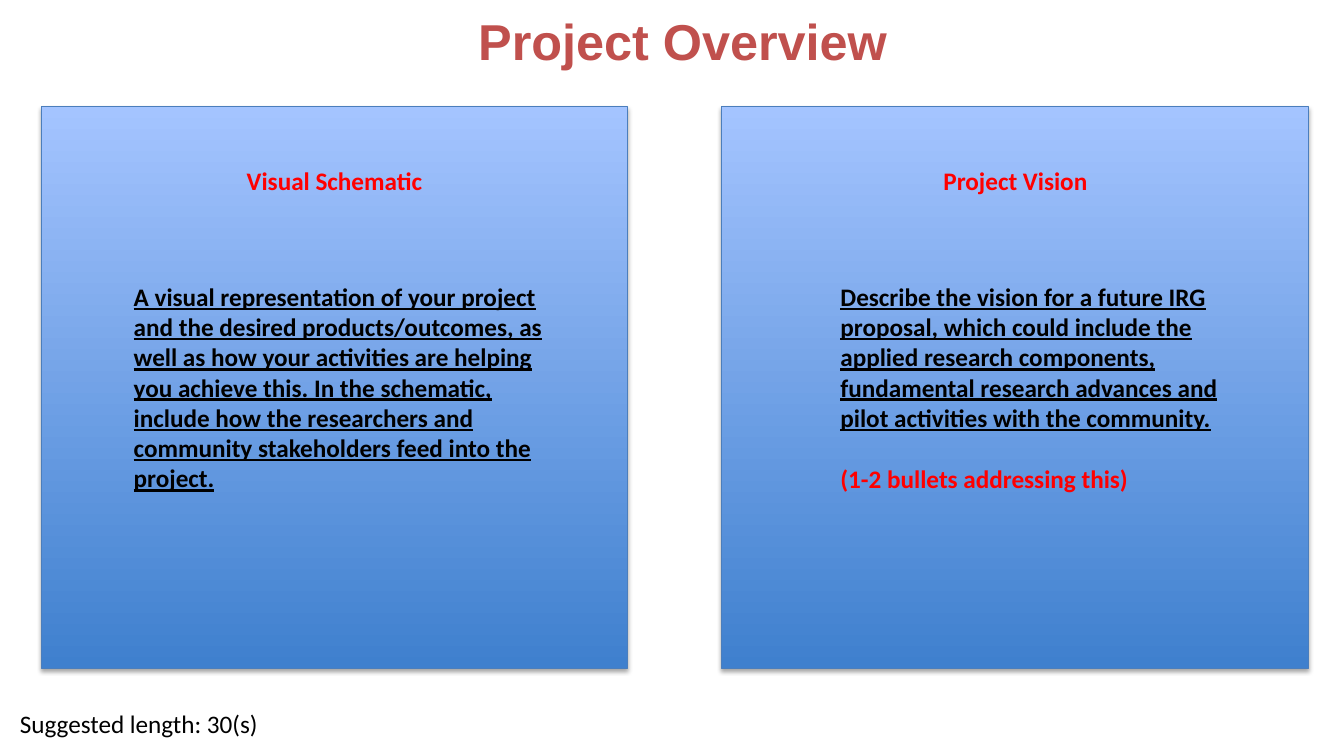
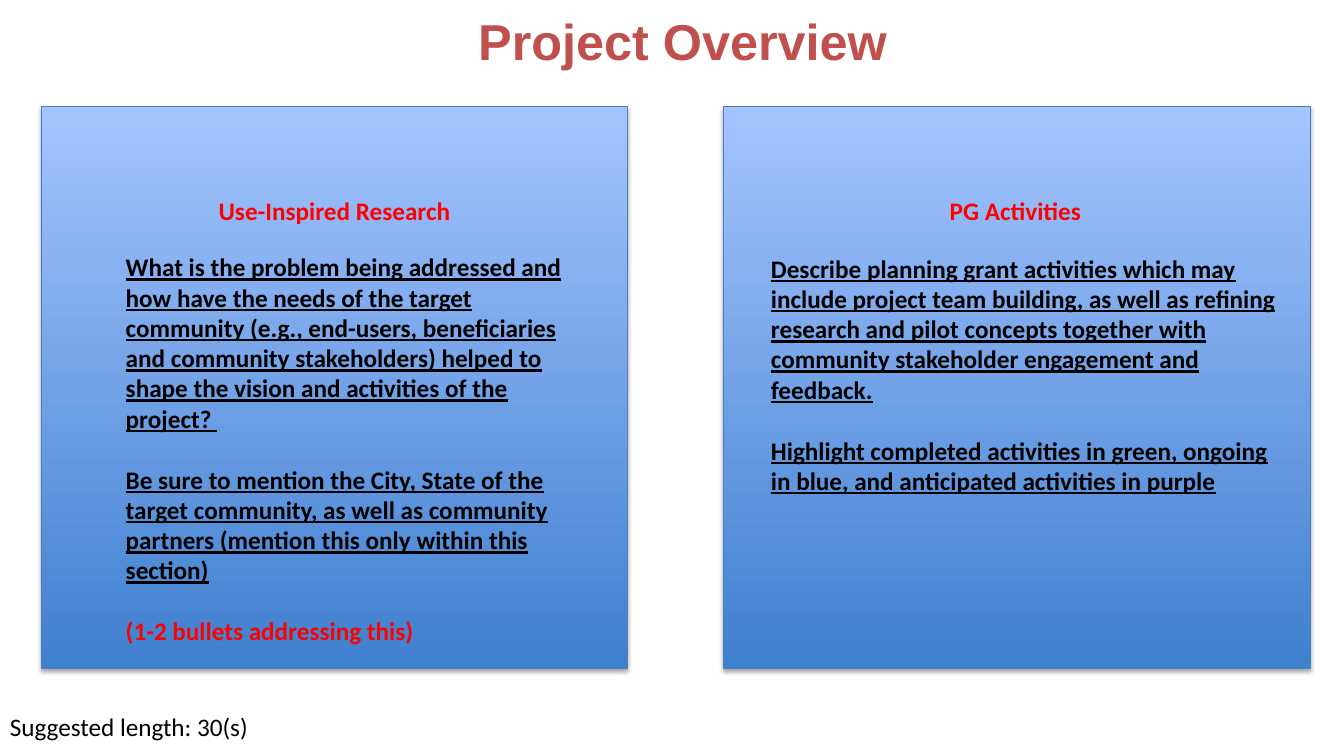
from dataclasses import dataclass

from lxml.etree import SubElement
from pptx import Presentation
from pptx.dml.color import RGBColor as Color
from pptx.enum.shapes import MSO_SHAPE as Preset
from pptx.enum.text import MSO_ANCHOR as Anchor, MSO_AUTO_SIZE as AutoSize, PP_ALIGN as Align
from pptx.oxml.ns import qn
from pptx.util import Cm, Pt


@dataclass(frozen=True)
class Theme:
    """Colours, fonts and type sizes shared by all slides."""
    title_color: str = "C0504D"
    accent: str = "FF0000"
    ink: str = "000000"
    panel_bottom: str = "3F80CE"
    panel_top: str = "A4C4FF"
    panel_line: str = "4B7EBC"
    title_font: str = "Arial"
    body_font: str = "Calibri"
    title_size: int = 36
    body_size: int = 18
    paragraph_gap: int = 22


def write(paragraph, text, *, font, size, color, bold=False, underline=False,
          align=Align.LEFT, gap=0):
    """Put formatted text into a paragraph."""
    paragraph.alignment = align
    paragraph.space_before = Pt(gap)
    run = paragraph.add_run()
    run.text = text
    run.font.name = font
    run.font.size = Pt(size)
    run.font.color.rgb = Color.from_string(color)
    run.font.bold = bold
    run.font.underline = underline


class OverviewDeck:
    """Holds the style and the current slide, and draws each kind of element."""

    PANEL_TOP, PANEL_WIDTH, PANEL_HEIGHT = 2.69, 14.78, 14.15
    HEADING_WIDTH = 7
    HEADING_CENTERS = (8.43, 25.59)

    def __init__(self, theme):
        """Start an empty widescreen presentation."""
        self.theme = theme
        self.presentation = Presentation()
        self.presentation.slide_width = Cm(33.87)
        self.presentation.slide_height = Cm(19.05)
        self.slide = None

    def add_slide(self):
        """Make a new blank slide the current one."""
        blank = self.presentation.slide_layouts[6]
        self.slide = self.presentation.slides.add_slide(blank)

    def panel(self, left):
        """Draw a gradient panel with a soft shadow."""
        theme = self.theme
        shape = self.slide.shapes.add_shape(
            Preset.RECTANGLE, Cm(left), Cm(self.PANEL_TOP),
            Cm(self.PANEL_WIDTH), Cm(self.PANEL_HEIGHT))
        shape.fill.gradient()
        shape.fill.gradient_angle = 90
        for stop, color in zip(shape.fill.gradient_stops, (theme.panel_bottom, theme.panel_top)):
            stop.color.rgb = Color.from_string(color)
        shape.line.color.rgb = Color.from_string(theme.panel_line)
        shape.line.width = Pt(0.75)
        shape.shadow.inherit = False
        effects = shape.element.spPr.find(qn("a:effectLst"))
        shadow = SubElement(effects, qn("a:outerShdw"), blurRad="40000", dist="23000",
                            dir="5400000", rotWithShape="0")
        black = SubElement(shadow, qn("a:srgbClr"), val="000000")
        SubElement(black, qn("a:alpha"), val="35000")

    def text_frame(self, left, top, width, height, wrap=True, grow=True):
        """Add a text box and return its frame."""
        box = self.slide.shapes.add_textbox(Cm(left), Cm(top), Cm(width), Cm(height))
        frame = box.text_frame
        frame.word_wrap = wrap
        frame.auto_size = AutoSize.SHAPE_TO_FIT_TEXT if grow else AutoSize.NONE
        return frame

    def title(self, text):
        """Write the slide title."""
        frame = self.text_frame(3.58, 0.28, 27.25, 1.45, grow=False)
        frame.vertical_anchor = Anchor.MIDDLE
        write(frame.paragraphs[0], text, font=self.theme.title_font, size=self.theme.title_size,
              color=self.theme.title_color, bold=True, align=Align.CENTER)

    def heading(self, text, center, top):
        """Write a panel heading around a centre line."""
        frame = self.text_frame(center - self.HEADING_WIDTH / 2, top, self.HEADING_WIDTH, 1.02)
        write(frame.paragraphs[0], text, font=self.theme.body_font, size=self.theme.body_size,
              color=self.theme.accent, bold=True, align=Align.CENTER)

    def body(self, box, prompts, hint=None):
        """Write underlined prompts and an optional closing hint."""
        theme = self.theme
        frame = self.text_frame(*box)
        entries = [(prompt, theme.ink, True) for prompt in prompts]
        if hint:
            entries.append((hint, theme.accent, False))
        for index, (text, color, underline) in enumerate(entries):
            paragraph = frame.add_paragraph() if index else frame.paragraphs[0]
            paragraph.level = 1
            properties = paragraph._p.get_or_add_pPr()
            properties.set("marL", str(Cm(1.27)))
            properties.set("indent", "0")
            write(paragraph, text, font=theme.body_font, size=theme.body_size, color=color,
                  bold=True, underline=underline, gap=theme.paragraph_gap if index else 0)

    def footer(self, text, left, top):
        """Write the suggested length at the lower left."""
        frame = self.text_frame(left, top, 6.58, 1.02, wrap=False)
        write(frame.paragraphs[0], text, font=self.theme.body_font,
              size=self.theme.body_size, color=self.theme.ink)

    def overview(self, panel_lefts, heading_top, footer_at, sections):
        """Build one overview slide with two panels."""
        self.add_slide()
        for left in panel_lefts:
            self.panel(left)
        self.title("Project Overview")
        self.footer("Suggested length: 30(s)", *footer_at)
        for center, (heading, box, prompts, hint) in zip(self.HEADING_CENTERS, sections):
            self.heading(heading, center, heading_top)
            self.body(box, prompts, hint)


HINT = "(1-2 bullets addressing this)"

VISION_SECTIONS = [
    ("Visual Schematic", (1.85, 6.96, 12.12, 5.64),
     ["A visual representation of your project and the desired products/outcomes, as well as "
      "how your activities are helping you achieve this. In the schematic, include how the "
      "researchers and community stakeholders feed into the project."], None),
    ("Project Vision", (19.66, 6.96, 11.81, 5.64),
     ["Describe the vision for a future IRG proposal, which could include the applied research "
      "components, fundamental research advances and pilot activities with the community."],
     HINT),
]

ACTIVITY_SECTIONS = [
    ("Use-Inspired Research", (1.65, 6.22, 13.54, 11.02),
     ["What is the problem being addressed and how have the needs of the target community "
      "(e.g., end-users, beneficiaries and community stakeholders) helped to shape the vision "
      "and activities of the project? ",
      "Be sure to mention the City, State of the target community, as well as community "
      "partners (mention this only within this section)"], HINT),
    ("PG Activities", (17.91, 6.25, 14.55, 6.4),
     ["Describe planning grant activities which may include project team building, as well as "
      "refining research and pilot concepts together with community stakeholder engagement "
      "and feedback.",
      "Highlight completed activities in green, ongoing in blue, and anticipated activities "
      "in purple"], None),
]


def main():
    """Build both slides and save them."""
    deck = OverviewDeck(Theme())
    deck.overview((18.19, 1.04), 4.04, (0.25, 17.73), VISION_SECTIONS)
    deck.overview((18.24, 1.04), 4.8, (0, 17.81), ACTIVITY_SECTIONS)
    deck.presentation.save("out.pptx")


if __name__ == "__main__":
    main()
